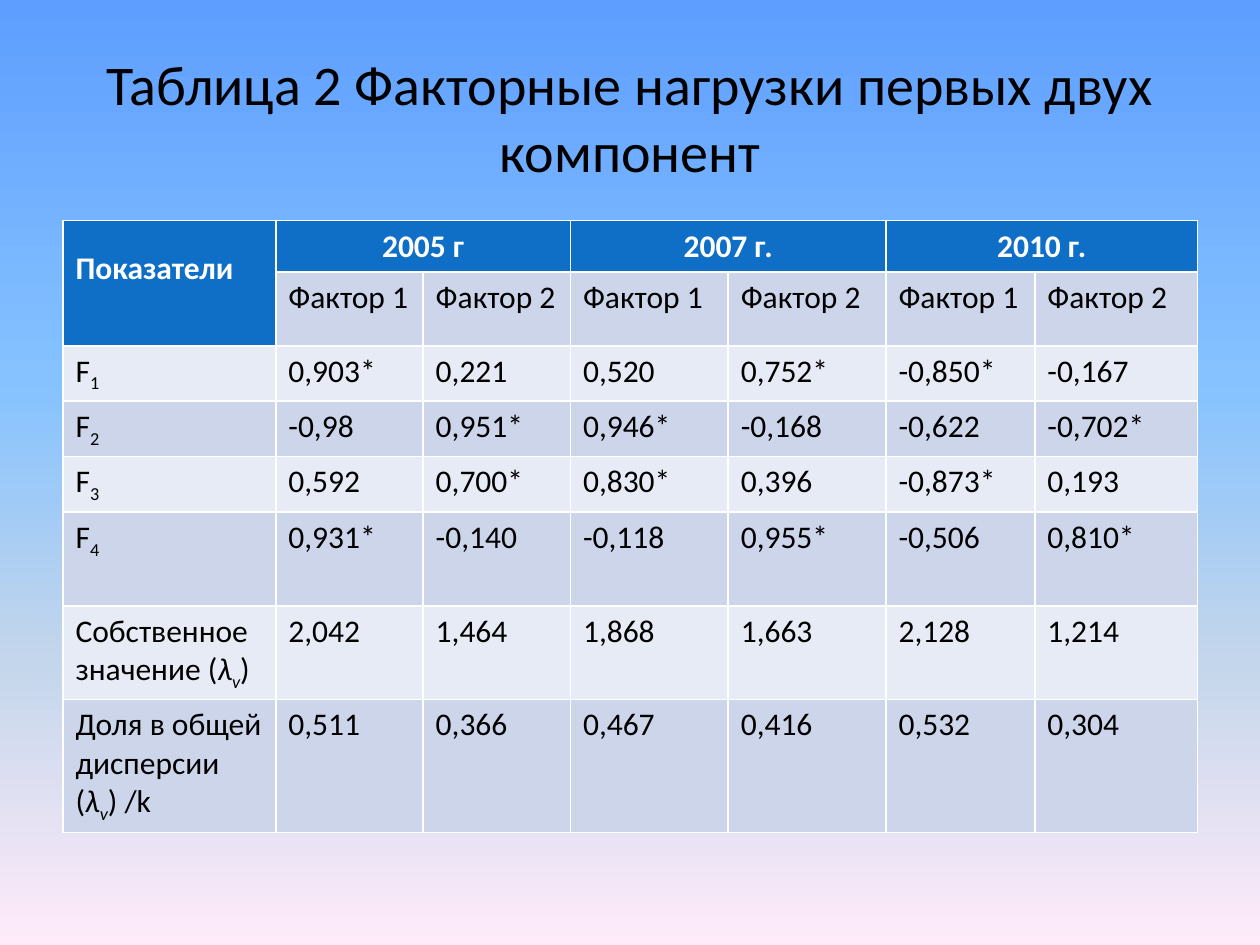
from pptx import Presentation
from pptx.dml.color import RGBColor as Rgb
from pptx.enum.text import MSO_ANCHOR as Anchor, PP_ALIGN as Align
from pptx.oxml.ns import qn
from pptx.util import Cm, Pt
from lxml.etree import SubElement as Sub

FONT = "Calibri"
BLUE, DARK, LIGHT = "0F6FC6", "CCD5EA", "E7EBF5"
STOPS = [(0, "5E9EFF"), (40, "85C2FF"), (70, "C4D6EB"), (100, "FFEBFA")]
WIDTHS = [4.29, 2.97, 2.97, 3.18, 3.18, 3, 3.28]
HEIGHTS = [1.03, 1.49, 1.11, 1.11, 1.12, 1.89, 1.88, 2.68]
YEARS = ["2005 г", "2007 г.", "2010 г."]
ROWS = [
    (("F", "", "1", ""), "0,903* 0,221 0,520 0,752* -0,850* -0,167"),
    (("F", "", "2", ""), "-0,98 0,951* 0,946* -0,168 -0,622 -0,702*"),
    (("F", "", "3", ""), "0,592 0,700* 0,830* 0,396 -0,873* 0,193"),
    (("F", "", "4", ""), "0,931* -0,140 -0,118 0,955* -0,506 0,810*"),
    (("Собственное значение (", "λ", "v", ")"),
     "2,042 1,464 1,868 1,663 2,128 1,214"),
    (("Доля в общей дисперсии (", "λ", "v", ") /k"),
     "0,511 0,366 0,467 0,416 0,532 0,304"),
]


def paint(fill, tone):
    """Give a fill one solid colour."""
    fill.solid()
    fill.fore_color.rgb = Rgb.from_string(tone)


def style(run, size, tone="000000", bold=False):
    """Set the font of a run."""
    font = run.font
    font.name, font.size, font.bold = FONT, Pt(size), bold
    paint(font.fill, tone)


def put(cell, text, back, tone="000000", bold=False, align=Align.LEFT):
    """Fill a cell with one line of text."""
    paint(cell.fill, back)
    para = cell.text_frame.paragraphs[0]
    para.text, para.alignment = text, align
    for run in para.runs:
        style(run, 18, tone, bold)


def label(cell, parts, back):
    """Write a row label with its symbol and subscript."""
    head, sign, low, tail = parts
    put(cell, head, back)
    para = cell.text_frame.paragraphs[0]
    for text in filter(None, (sign, low, tail)):
        run = para.add_run()
        run.text = text
        style(run, 18)
        run.font.italic = bool(sign) and text != tail
        if text == low:
            run.font._element.set("baseline", "-25000")


def shade(slide):
    """Lay the vertical gradient on the background."""
    fill = slide.background.fill
    fill.gradient()
    fill.gradient_angle = 270
    stops = slide.element.find(".//" + qn("a:gsLst"))
    stops.clear()
    for pos, tone in STOPS:
        stop = Sub(stops, qn("a:gs"), pos=str(pos * 1000))
        Sub(stop, qn("a:srgbClr"), val=tone)


def title(slide, left, top, width, height):
    """Place the title in its box."""
    box = slide.shapes.title
    box.left, box.top, box.width, box.height = map(Cm, (left, top, width, height))
    frame = box.text_frame
    frame.text = "Таблица 2 Факторные нагрузки первых двух компонент"
    frame.vertical_anchor = Anchor.MIDDLE
    para = frame.paragraphs[0]
    para.alignment = Align.CENTER
    style(para.runs[0], 32)


def header(table):
    """Fill the two header rows."""
    first = table.cell(0, 0)
    first.merge(table.cell(1, 0))
    put(first, "Показатели", BLUE, "FFFFFF", True)
    first.margin_top = Cm(0.58)
    for num, year in enumerate(YEARS):
        col = 2 * num + 1
        cell = table.cell(0, col)
        cell.merge(table.cell(0, col + 1))
        put(cell, year, BLUE, "FFFFFF", True, Align.CENTER)
        for step in range(2):
            put(table.cell(1, col + step), f"Фактор {step + 1}", DARK)


def grid(slide, left, top):
    """Place the table of factor loadings."""
    size = Cm(sum(WIDTHS)), Cm(sum(HEIGHTS))
    table = slide.shapes.add_table(
        len(HEIGHTS), len(WIDTHS), Cm(left), Cm(top), *size).table
    for col, width in zip(table.columns, WIDTHS):
        col.width = Cm(width)
    for row, height in zip(table.rows, HEIGHTS):
        row.height = Cm(height)
    header(table)
    for num, (parts, data) in enumerate(ROWS):
        back = DARK if num % 2 else LIGHT
        label(table.cell(num + 2, 0), parts, back)
        for col, text in enumerate(data.split(), 1):
            put(table.cell(num + 2, col), text, back)


def main():
    """Build the slide and save it."""
    deck = Presentation()
    deck.slide_width, deck.slide_height = Cm(25.4), Cm(19.05)
    slide = deck.slides.add_slide(deck.slide_layouts[5])
    shade(slide)
    title(slide, 1.27, 0.76, 22.86, 3.18)
    grid(slide, 1.27, 4.45)
    deck.save("out.pptx")


if __name__ == "__main__":
    main()
